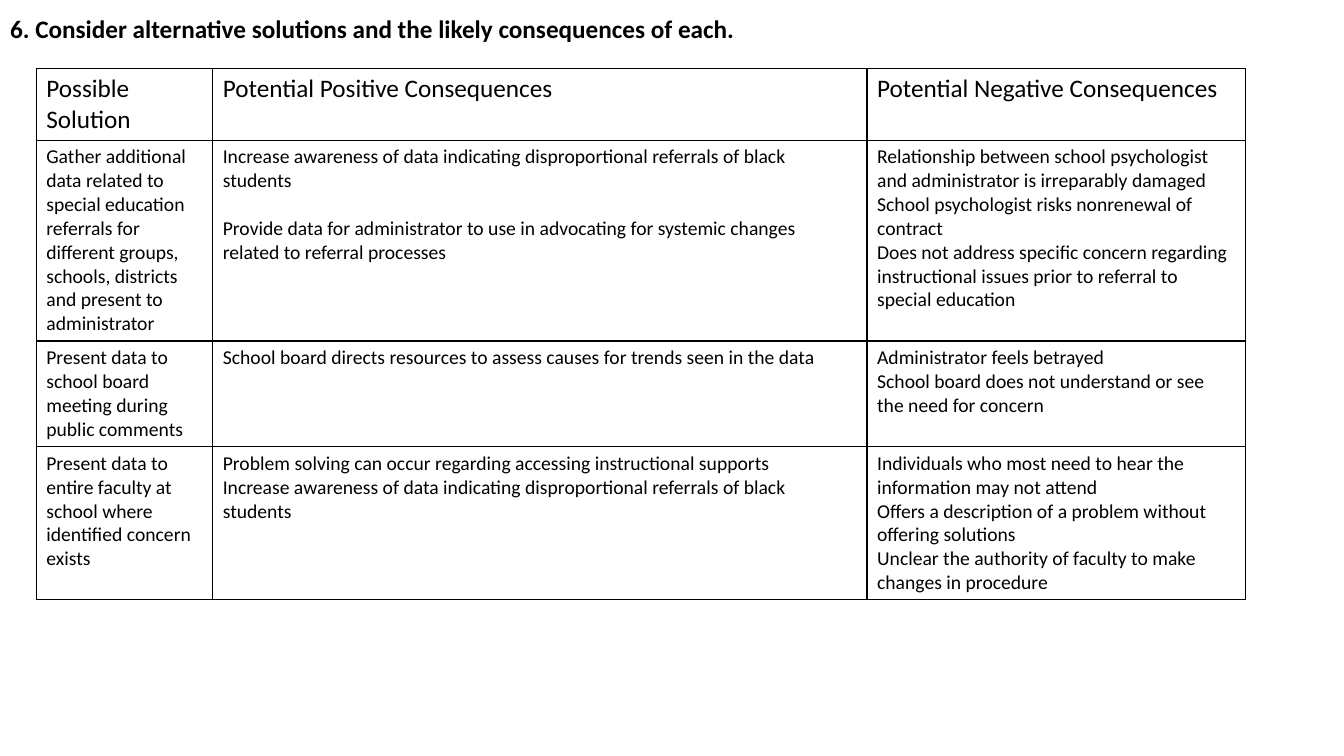
import pptx
import pptx.dml.color
import pptx.enum.text
import pptx.oxml
import pptx.oxml.ns
import pptx.util
from pptx.util import Inches, Pt

BLACK = pptx.dml.color.RGBColor(0, 0, 0)

HEADS = ["Possible Solution", "Potential Positive Consequences",
         "Potential Negative Consequences"]
# Each row: solution, positive consequences, negative consequences
ROWS = [
    (["Gather additional data related to special education referrals for "
      "different groups, schools, districts and present to administrator"],
     ["Increase awareness of data indicating disproportional referrals of black students",
      "Provide data for administrator to use in advocating for systemic changes "
      "related to referral processes"],
     ["Relationship between school psychologist and administrator is irreparably damaged",
      "School psychologist risks nonrenewal of contract",
      "Does not address specific concern regarding instructional issues prior to "
      "referral to special education"]),
    (["Present data to school board meeting during public comments"],
     ["School board directs resources to assess causes for trends seen in the data"],
     ["Administrator feels betrayed",
      "School board does not understand or see the need for concern"]),
    (["Present data to entire faculty at school where identified concern exists"],
     ["Problem solving can occur regarding accessing instructional supports",
      "Increase awareness of data indicating disproportional referrals of black students"],
     ["Individuals who most need to hear the information may not attend",
      "Offers a description of a problem without offering solutions",
      "Unclear the authority of faculty to make changes in procedure"]),
]
WIDTHS = [1.75, 6.49, 3.75]
HEIGHTS = [0.69, 1.97, 1.03, 1.5]


class Page:
    font = "Calibri"
    head = 18
    body = 14

    def __init__(self, deck):
        self.slide = deck.slides.add_slide(deck.slide_layouts[5])

    def text(self, frame, lines, size, bold=False):
        for i, line in enumerate(lines):
            para = frame.add_paragraph() if i else frame.paragraphs[0]
            para.alignment = pptx.enum.text.PP_ALIGN.LEFT
            run = para.add_run()
            run.text = line
            run.font.name = self.font
            run.font.size = Pt(size)
            run.font.bold = bold
            run.font.color.rgb = BLACK

    def title(self, text, left, top, width, height):
        box = self.slide.shapes.title
        box.left, box.top = Inches(left), Inches(top)
        box.width, box.height = Inches(width), Inches(height)
        frame = box.text_frame
        frame.word_wrap = False
        frame.auto_size = pptx.enum.text.MSO_AUTO_SIZE.NONE
        frame.vertical_anchor = pptx.enum.text.MSO_ANCHOR.TOP
        self.text(frame, [text], self.head, True)

    def border(self, cell):
        """Draw a 1 pt black line on all four sides, ahead of the fill."""
        props = cell._tc.get_or_add_tcPr()
        for i, side in enumerate(("lnL", "lnR", "lnT", "lnB")):
            props.insert(i, pptx.oxml.parse_xml(
                f'<a:{side} {pptx.oxml.ns.nsdecls("a")} w="{Pt(1)}"><a:solidFill>'
                f'<a:srgbClr val="{BLACK}"/></a:solidFill></a:{side}>'))

    def table(self, rows, left, top, widths, heights):
        grid = self.slide.shapes.add_table(
            len(rows), len(widths), Inches(left), Inches(top),
            Inches(sum(widths)), Inches(sum(heights))).table
        grid.first_row = grid.horz_banding = False
        for col, width in zip(grid.columns, widths):
            col.width = Inches(width)
        for r, (row, height) in enumerate(zip(rows, heights)):
            grid.rows[r].height = Inches(height)
            for c, lines in enumerate(row):
                cell = grid.cell(r, c)
                cell.fill.background()
                self.border(cell)
                self.text(cell.text_frame, lines, self.body if r else self.head)
        return grid


def main():
    deck = pptx.Presentation()
    deck.slide_width, deck.slide_height = Inches(13.33), Inches(7.5)
    page = Page(deck)
    page.title("6. Consider alternative solutions and the likely consequences of each.",
               0, 0.08, 7.44, 0.71)
    grid = page.table([[[head] for head in HEADS], *ROWS], 0.36, 0.68, WIDTHS, HEIGHTS)
    # One line of space between the two benefits of gathering data
    grid.cell(1, 1).text_frame.paragraphs[1].space_before = Pt(17)
    deck.save("out.pptx")


if __name__ == "__main__":
    main()
